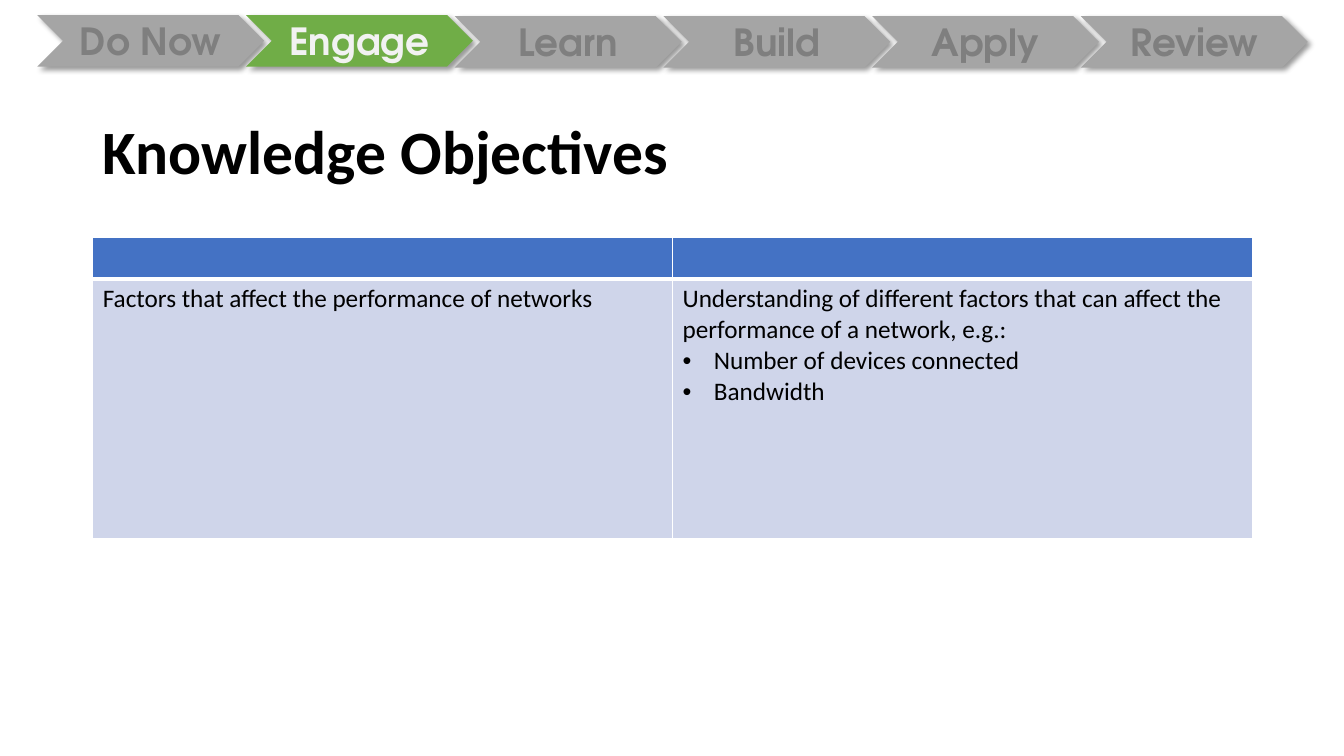
import pptx
import pptx.util
import pptx.dml.color
import pptx.enum.shapes
import pptx.enum.text
import pptx.oxml
import pptx.oxml.ns
import lxml.etree

Inches = pptx.util.Inches
Pt = pptx.util.Pt
ALIGN = pptx.enum.text.PP_ALIGN
MIDDLE = pptx.enum.text.MSO_ANCHOR.MIDDLE
NS = pptx.oxml.ns.nsdecls("a")


def paint(target, color):
    """Give a fill or line fill a solid colour."""
    target.solid()
    target.fore_color.rgb = pptx.dml.color.RGBColor.from_string(color)


def write(frame, text, size=18, font="Calibri", color="000000", bold=False,
          align=ALIGN.LEFT, spacing=None, bullets=()):
    """Fill a text frame with one paragraph and optional bullets below it."""
    for i, line in enumerate([text, *bullets]):
        para = frame.paragraphs[0] if i == 0 else frame.add_paragraph()
        para.text = line
        para.alignment = align
        if spacing:
            para.line_spacing = spacing
        if i > 0:
            props = para._p.get_or_add_pPr()
            props.set("marL", str(Inches(0.31)))
            props.set("indent", str(Inches(-0.31)))
            props.append(pptx.oxml.parse_xml(f'<a:buFont {NS} typeface="Arial"/>'))
            props.append(pptx.oxml.parse_xml(f'<a:buChar {NS} char="•"/>'))
        for run in para.runs:
            run.font.size = Pt(size)
            run.font.name = font
            run.font.bold = bold
            paint(run.font.fill, color)


deck = pptx.Presentation()
deck.slide_width = Inches(13.33)
deck.slide_height = Inches(7.5)
slide = deck.slides.add_slide(deck.slide_layouts[5])
paint(slide.background.fill, "FFFFFF")

# Lesson stages
stages = ["Do Now", "Engage", "Learn", "Build", "Apply", "Review"]
active = "Engage"
for i, stage in enumerate(stages):
    top = 0.15 if i < 2 else 0.16
    arrow = slide.shapes.add_shape(
        pptx.enum.shapes.MSO_SHAPE.CHEVRON,
        Inches(0.37 + 2.07 * i), Inches(top), Inches(2.25), Inches(0.51))
    paint(arrow.fill, "70AD47" if stage == active else "A5A5A5")
    arrow.line.fill.background()
    arrow.shadow.inherit = False
    effects = arrow._element.spPr.find(pptx.oxml.ns.qn("a:effectLst"))
    effects.append(pptx.oxml.parse_xml(
        f'<a:outerShdw {NS} blurRad="{Pt(4)}" dist="{Pt(3)}" dir="2700000" '
        'algn="tl" rotWithShape="0"><a:srgbClr val="000000">'
        '<a:alpha val="40000"/></a:srgbClr></a:outerShdw>'))
    frame = arrow.text_frame
    frame.word_wrap = False
    frame.vertical_anchor = MIDDLE
    write(frame, stage, size=26.7, font="TeX Gyre Adventor", bold=True,
          color="F2F2F2" if stage == active else "7F7F7F", align=ALIGN.CENTER)

# Title
title = slide.shapes.title
title.left, title.top = Inches(0.92), Inches(0.81)
title.width, title.height = Inches(11.5), Inches(1.45)
title.text_frame.vertical_anchor = MIDDLE
write(title.text_frame, "Knowledge Objectives", size=44, bold=True, spacing=0.9)

# Objectives table
table = slide.shapes.add_table(
    2, 2, Inches(0.92), Inches(2.36), Inches(11.5), Inches(2.98)).table
table.rows[0].height = Inches(0.4)
table.rows[1].height = Inches(2.58)
for r, color in enumerate(["4472C4", "CFD5EA"]):
    for cell in table.rows[r].cells:
        props = cell._tc.get_or_add_tcPr()
        for side in "LRTB":
            # A thick rule separates the header from the body
            thick = (r, side) in [(0, "B"), (1, "T")]
            props.append(pptx.oxml.parse_xml(
                f'<a:ln{side} {NS} w="{Pt(3 if thick else 1)}"><a:solidFill>'
                f'<a:srgbClr val="FFFFFF"/></a:solidFill></a:ln{side}>'))
        paint(cell.fill, color)

write(table.cell(1, 0).text_frame, "Factors that affect the performance of networks")
write(table.cell(1, 1).text_frame,
      "Understanding of different factors that can affect the "
      "performance of a network, e.g.:",
      bullets=["Number of devices connected", "Bandwidth"])

deck.save("out.pptx")
